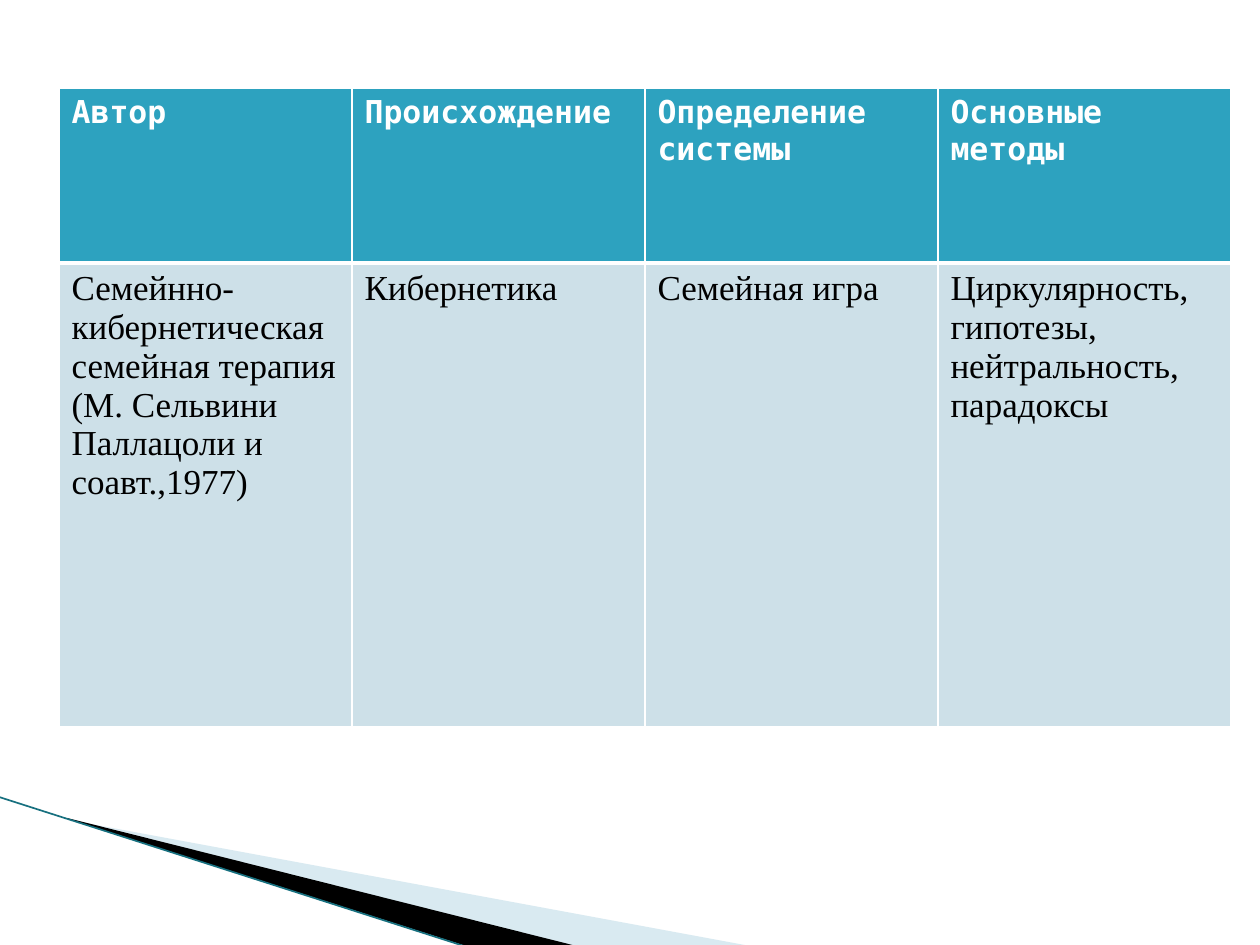
from lxml import etree
from pptx import Presentation
from pptx.dml.color import RGBColor
from pptx.enum.shapes import MSO_CONNECTOR
from pptx.oxml.ns import qn
from pptx.util import Pt

STRAIGHT = MSO_CONNECTOR.STRAIGHT
EMU_PER_PX = 914400 / 126

COLORS = {
    "header": "2DA2BF",
    "body": "CDE0E8",
    "border": "FFFFFF",
    "header_text": "FFFFFF",
    "body_text": "000000",
    "pale_wedge": "A0CBDC",
    "dark_wedge": "000000",
    "edge": "17707F",
}

HEADER_FONT = {"name": "DejaVu Sans Mono", "size": Pt(18), "bold": True}
BODY_FONT = {"name": "Times New Roman", "size": Pt(20), "bold": False}

HEADERS = ["Автор", "Происхождение", "Определение системы", "Основные методы"]
THERAPY = [
    "Семейнно- кибернетическая семейная терапия\n"
    "(М. Сельвини Паллацоли и соавт.,1977)",
    "Кибернетика",
    "Семейная игра",
    "Циркулярность, гипотезы, нейтральность,\nпарадоксы",
]


def px(n):
    return round(n * EMU_PER_PX)


def rgb(key):
    return RGBColor.from_string(COLORS[key])


def add_wedge(slide, points, color, alpha=None):
    """Add a filled outline; alpha is its opacity in percent."""
    builder = slide.shapes.build_freeform(*points[0], scale=EMU_PER_PX)
    builder.add_line_segments(points[1:], close=True)
    sp = builder.convert_to_shape()
    sp.shadow.inherit = False
    sp.fill.solid()
    sp.fill.fore_color.rgb = rgb(color)
    sp.line.fill.background()
    if alpha is not None:
        clr = sp._element.spPr.find(qn("a:solidFill"))[0]
        etree.SubElement(clr, qn("a:alpha"), val=str(alpha * 1000))


def add_line(slide, start, end, color, width):
    line = slide.shapes.add_connector(STRAIGHT, *map(px, start + end))
    line.line.color.rgb = rgb(color)
    line.line.width = Pt(width)
    etree.SubElement(line._element.spPr, qn("a:effectLst"))


def set_borders(cell, widths):
    """Draw the left, right, top and bottom borders, widths in points."""
    tc_pr = cell._tc.get_or_add_tcPr()
    for side, width in zip("LRTB", widths):
        ln = etree.SubElement(tc_pr, qn(f"a:ln{side}"), w=str(Pt(width)))
        fill = etree.SubElement(ln, qn("a:solidFill"))
        etree.SubElement(fill, qn("a:srgbClr"), val=COLORS["border"])


def fill_row(cells, texts, kind, font, borders):
    for cell, text in zip(cells, texts):
        set_borders(cell, borders)
        cell.fill.solid()
        cell.fill.fore_color.rgb = rgb(kind)
        cell.text = text
        for p in cell.text_frame.paragraphs:
            for r in p.runs:
                for name, value in font.items():
                    setattr(r.font, name, value)
                r.font.color.rgb = rgb(f"{kind}_text")


def add_methods_table(slide, left, top, col_width, row_heights):
    width, height = col_width * len(HEADERS), sum(row_heights)
    table = slide.shapes.add_table(
        len(row_heights), len(HEADERS), *map(px, (left, top, width, height))
    ).table
    table.first_row = table.horz_banding = False
    for col in table.columns:
        col.width = px(col_width)
    for row, row_height in zip(table.rows, row_heights):
        row.height = px(row_height)
    header, body = table.rows
    fill_row(header.cells, HEADERS, "header", HEADER_FONT, (1, 1, 1, 3))
    fill_row(body.cells, THERAPY, "body", BODY_FONT, (1, 1, 3, 1))


def main():
    prs = Presentation()
    prs.slide_width, prs.slide_height = px(1260), px(945)
    slide = prs.slides.add_slide(prs.slide_layouts[6])

    add_wedge(slide, [(69, 820), (750, 946), (575, 946), (69, 819)],
              "pale_wedge", alpha=40)
    add_wedge(slide, [(67, 818), (576, 946), (469, 947), (68, 819)],
              "dark_wedge")
    add_line(slide, (-1, 797), (467, 947), "edge", 0.95)
    add_methods_table(slide, 59, 88, 293, (175, 464))

    prs.save("out.pptx")


if __name__ == "__main__":
    main()
